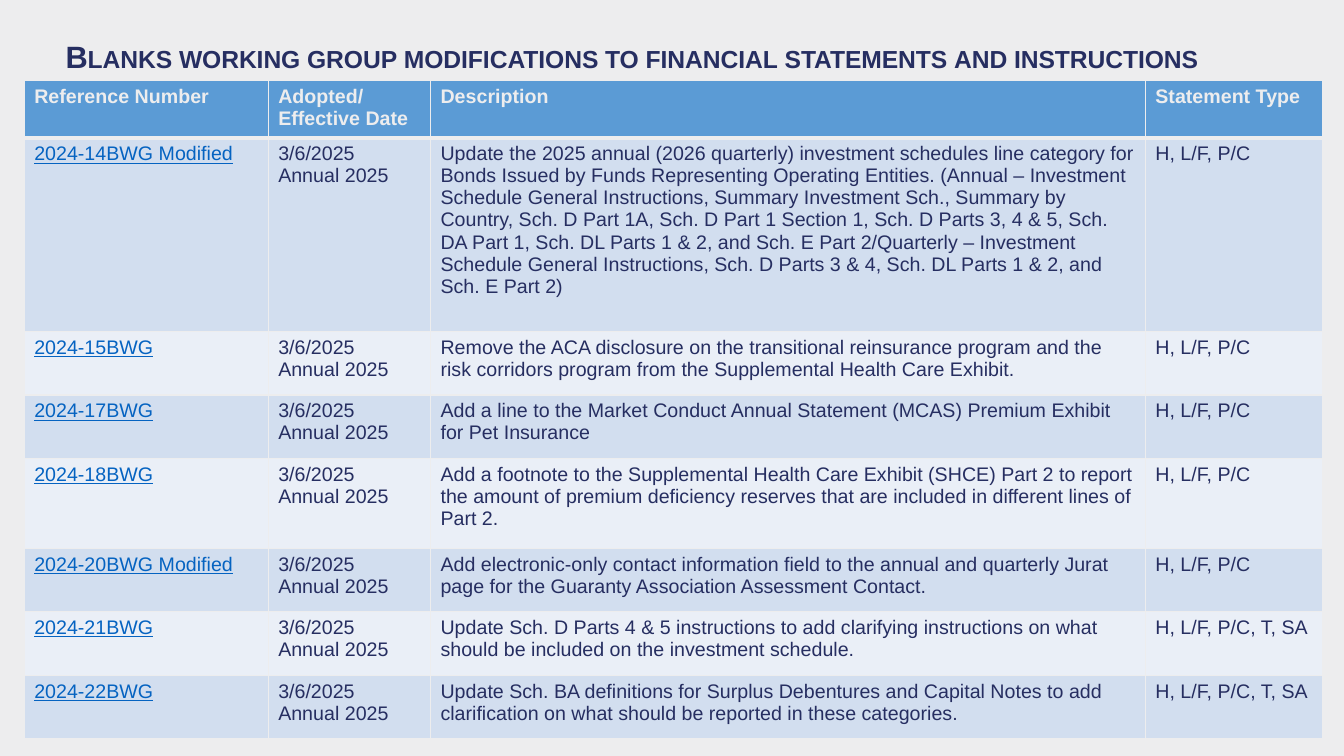
from dataclasses import dataclass

from lxml import etree
from pptx import Presentation
from pptx.dml.color import RGBColor
from pptx.enum import text
from pptx.oxml.ns import qn
from pptx.util import Inches, Pt


@dataclass(frozen=True)
class Theme:
    font: str = "Arial"
    title_size: int = 22
    table_size: int = 14
    paper: str = "EDEDEE"
    ink: str = "262E61"
    link: str = "0563C1"
    header: str = "5B9BD5"
    bands: tuple = ("D2DEEF", "EAEFF7")


THEME = Theme()
TITLE = "Blanks working group modifications to financial statements and instructions"
HEADERS = ("Reference Number", "Adopted/\nEffective Date", "Description", "Statement Type")
ADOPTED = "3/6/2025\nAnnual 2025"
COL_WIDTHS = (2.42, 1.61, 7.09, 1.76)
HEADER_HEIGHT = 0.57
BASE_TYPES = "H, L/F, P/C"
ALL_TYPES = "H, L/F, P/C, T, SA"

# Reference, description, statement types, row height
MODIFICATIONS = (
    ("2024-14BWG Modified",
     "Update the 2025 annual (2026 quarterly) investment schedules line category for "
     "Bonds Issued by Funds Representing Operating Entities. (Annual – Investment "
     "Schedule General Instructions, Summary Investment Sch., Summary by Country, "
     "Sch. D Part 1A, Sch. D Part 1 Section 1, Sch. D Parts 3, 4 & 5, Sch. DA Part 1, "
     "Sch. DL Parts 1 & 2, and Sch. E Part 2/Quarterly – Investment Schedule General "
     "Instructions, Sch. D Parts 3 & 4, Sch. DL Parts 1 & 2, and Sch. E Part 2)",
     BASE_TYPES, 1.92),
    ("2024-15BWG",
     "Remove the ACA disclosure on the transitional reinsurance program and the risk "
     "corridors program from the Supplemental Health Care Exhibit.",
     BASE_TYPES, 0.63),
    ("2024-17BWG",
     "Add a line to the Market Conduct Annual Statement (MCAS) Premium Exhibit for "
     "Pet Insurance",
     BASE_TYPES, 0.63),
    ("2024-18BWG",
     "Add a footnote to the Supplemental Health Care Exhibit (SHCE) Part 2 to report "
     "the amount of premium deficiency reserves that are included in different lines "
     "of Part 2.",
     BASE_TYPES, 0.89),
    ("2024-20BWG Modified",
     "Add electronic-only contact information field to the annual and quarterly Jurat "
     "page for the Guaranty Association Assessment Contact.",
     BASE_TYPES, 0.63),
    ("2024-21BWG",
     "Update Sch. D Parts 4 & 5 instructions to add clarifying instructions on what "
     "should be included on the investment schedule.",
     ALL_TYPES, 0.63),
    ("2024-22BWG",
     "Update Sch. BA definitions for Surplus Debentures and Capital Notes to add "
     "clarification on what should be reported in these categories.",
     ALL_TYPES, 0.63),
)


def format_runs(tf, size, color, bold=False, underline=False):
    for p in tf.paragraphs:
        for r in p.runs:
            r.font.name = THEME.font
            r.font.size = Pt(size)
            r.font.bold = bold
            r.font.underline = underline
            r.font.color.rgb = RGBColor.from_string(color)


def set_borders(cell, bottom=1):
    tc_pr = cell._tc.get_or_add_tcPr()
    for side, width in (("L", 1), ("R", 1), ("T", 1), ("B", bottom)):
        ln = etree.SubElement(tc_pr, qn(f"a:ln{side}"), w=str(Pt(width)))
        fill = etree.SubElement(ln, qn("a:solidFill"))
        etree.SubElement(fill, qn("a:srgbClr"), val=THEME.paper)


def fill_cell(cell, content, fill, color, bottom=1, **style):
    set_borders(cell, bottom)
    cell.fill.solid()
    cell.fill.fore_color.rgb = RGBColor.from_string(fill)
    cell.text_frame.text = content
    format_runs(cell.text_frame, THEME.table_size, color, **style)


def add_title(slide):
    sp = slide.shapes.title
    sp.left, sp.top, sp.width, sp.height = map(Inches, (0.55, 0.37, 11.93, 0.74))
    tf = sp.text_frame
    tf.text = TITLE
    tf.word_wrap = True
    tf.auto_size = text.MSO_AUTO_SIZE.NONE
    tf.vertical_anchor = text.MSO_ANCHOR.TOP
    p = tf.paragraphs[0]
    p.alignment = text.PP_ALIGN.LEFT
    p.line_spacing = 0.9
    p.space_before = Pt(0)
    format_runs(tf, THEME.title_size, THEME.ink, bold=True)
    p.runs[0]._r.get_or_add_rPr().set("cap", "small")


def add_modifications_table(slide):
    heights = [HEADER_HEIGHT] + [row[-1] for row in MODIFICATIONS]
    table = slide.shapes.add_table(
        len(heights), len(COL_WIDTHS), Inches(0.24), Inches(0.8),
        Inches(sum(COL_WIDTHS)), Inches(sum(heights))).table
    for column, width in zip(table.columns, COL_WIDTHS):
        column.width = Inches(width)
    for row, height in zip(table.rows, heights):
        row.height = Inches(height)

    # Header row
    for col, label in enumerate(HEADERS):
        fill_cell(table.cell(0, col), label, THEME.header, THEME.paper, bottom=3, bold=True)

    # Banded rows, with the reference styled as a link
    for i, (reference, description, types, _) in enumerate(MODIFICATIONS):
        band = THEME.bands[i % 2]
        for col, content in enumerate((reference, ADOPTED, description, types)):
            is_link = col == 0
            fill_cell(table.cell(i + 1, col), content, band,
                      THEME.link if is_link else THEME.ink, underline=is_link)


def main():
    prs = Presentation()
    prs.slide_width, prs.slide_height = Inches(13.33), Inches(7.5)
    slide = prs.slides.add_slide(prs.slide_layouts[5])
    slide.background.fill.solid()
    slide.background.fill.fore_color.rgb = RGBColor.from_string(THEME.paper)
    add_title(slide)
    add_modifications_table(slide)
    prs.save("out.pptx")


if __name__ == "__main__":
    main()
